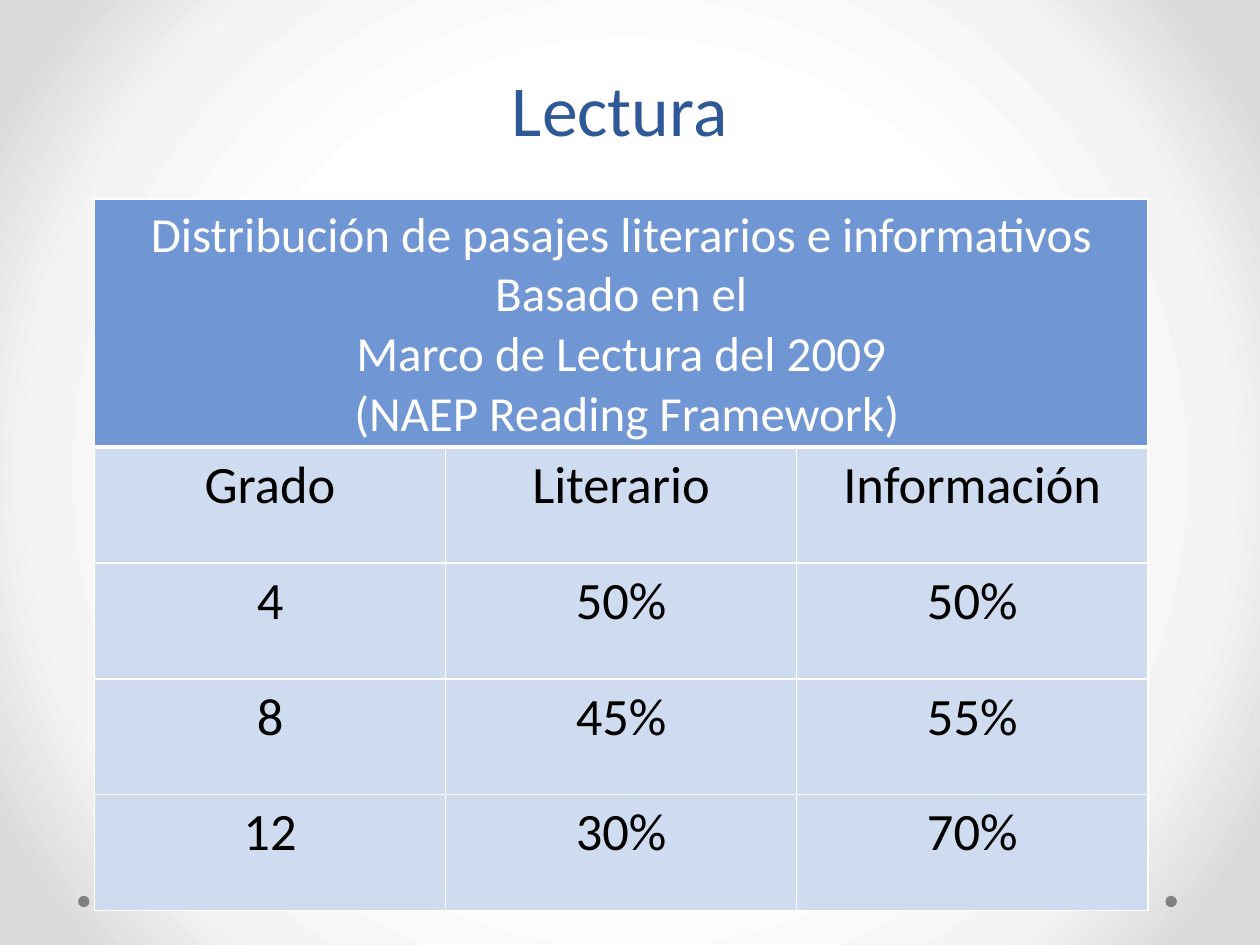
"""Build a slide with a table of reading passage shares by grade."""
from typing import NamedTuple

from lxml.etree import SubElement
from pptx import Presentation
from pptx.dml.color import RGBColor
from pptx.enum.shapes import MSO_SHAPE
from pptx.enum.text import MSO_ANCHOR, PP_ALIGN
from pptx.oxml import parse_xml
from pptx.oxml.ns import nsdecls, qn
from pptx.util import Inches, Pt

BLUE = RGBColor(0x2F, 0x58, 0x97)
HEADER_BLUE = RGBColor(0x70, 0x97, 0xD3)
PALE_BLUE = RGBColor(0xCF, 0xDC, 0xF0)
WHITE = RGBColor(0xFF, 0xFF, 0xFF)
BLACK = RGBColor(0, 0, 0)
GRAY = RGBColor(0x80, 0x80, 0x80)
BACKGROUND_STOPS = ((50, WHITE), (76, RGBColor(0xF4, 0xF4, 0xF4)), (92, RGBColor(0xDA, 0xDA, 0xDA)))


class Dot(NamedTuple):
    left: float
    top: float = 7.11
    size: float = 0.09


class GradeShare(NamedTuple):
    grade: str
    literary: str
    informative: str


DOTS = (Dot(9.25), Dot(0.62))
HEADING = (
    "Distribución de pasajes literarios e informativos Basado en el",
    "Marco de Lectura del 2009",
    " (NAEP Reading Framework)",
)
ROWS = (
    GradeShare("Grado", "Literario", "Información"),
    GradeShare("4", "50%", "50%"),
    GradeShare("8", "45%", "55%"),
    GradeShare("12", "30%", "70%"),
)


def write_text(text_frame, *lines: str, size: float, color: RGBColor, spacing=None) -> None:
    for index, line in enumerate(lines):
        paragraph = text_frame.add_paragraph() if index else text_frame.paragraphs[0]
        paragraph.alignment = PP_ALIGN.CENTER
        if spacing:
            paragraph.line_spacing = spacing
        run = paragraph.add_run()
        run.text = line
        run.font.name = "Calibri"
        run.font.size = Pt(size)
        run.font.color.rgb = color


def paint_background(slide) -> None:
    stops = "".join(
        f'<a:gs pos="{position * 1000}"><a:srgbClr val="{color}"/></a:gs>'
        for position, color in BACKGROUND_STOPS
    )
    background = parse_xml(
        f'<p:bg {nsdecls("p", "a")}><p:bgPr><a:gradFill rotWithShape="1"><a:gsLst>{stops}</a:gsLst>'
        '<a:path path="circle"><a:fillToRect l="50000" t="50000" r="50000" b="50000"/></a:path>'
        "</a:gradFill><a:effectLst/></p:bgPr></p:bg>"
    )
    slide.element.cSld.insert(0, background)


def draw_dot(slide, dot: Dot) -> None:
    shape = slide.shapes.add_shape(
        MSO_SHAPE.OVAL, Inches(dot.left), Inches(dot.top), Inches(dot.size), Inches(dot.size)
    )
    shape.shadow.inherit = False
    shape.fill.solid()
    shape.fill.fore_color.rgb = GRAY
    shape.line.fill.background()


def draw_title(slide, title: str) -> None:
    box = slide.shapes.add_textbox(Inches(0.42), Inches(0.39), Inches(9), Inches(0.86))
    box.text_frame.word_wrap = True
    box.text_frame.vertical_anchor = MSO_ANCHOR.BOTTOM
    write_text(box.text_frame, title, size=41, color=BLUE, spacing=Pt(58))


def style_cell(cell, fill: RGBColor, bottom_width: float = 1) -> None:
    properties = cell._tc.get_or_add_tcPr()
    for side in "LRTB":
        width = bottom_width if side == "B" else 1
        border = SubElement(properties, qn(f"a:ln{side}"), w=str(Pt(width)))
        SubElement(SubElement(border, qn("a:solidFill")), qn("a:srgbClr"), val=str(WHITE))
    cell.fill.solid()
    cell.fill.fore_color.rgb = fill


def draw_table(slide) -> None:
    table = slide.shapes.add_table(
        len(ROWS) + 1, 3, Inches(0.75), Inches(1.58), Inches(8.36), Inches(5.64)
    ).table
    for row in table.rows:
        row.height = Inches(0.92)
    table.rows[0].height = Inches(1.58)
    for cell in table.rows[0].cells:
        style_cell(cell, HEADER_BLUE, bottom_width=3)
    heading = table.cell(0, 0)
    heading.merge(table.cell(0, 2))
    write_text(heading.text_frame, *HEADING, size=28, color=WHITE)
    for row_index, share in enumerate(ROWS, start=1):
        for column_index, value in enumerate(share):
            cell = table.cell(row_index, column_index)
            style_cell(cell, PALE_BLUE)
            write_text(cell.text_frame, value, size=30, color=BLACK)


def main() -> None:
    presentation = Presentation()
    presentation.slide_width = Inches(10)
    presentation.slide_height = Inches(7.5)
    slide = presentation.slides.add_slide(presentation.slide_layouts[6])
    paint_background(slide)
    for dot in DOTS:
        draw_dot(slide, dot)
    draw_title(slide, "Lectura")
    draw_table(slide)
    presentation.save("out.pptx")


if __name__ == "__main__":
    main()
